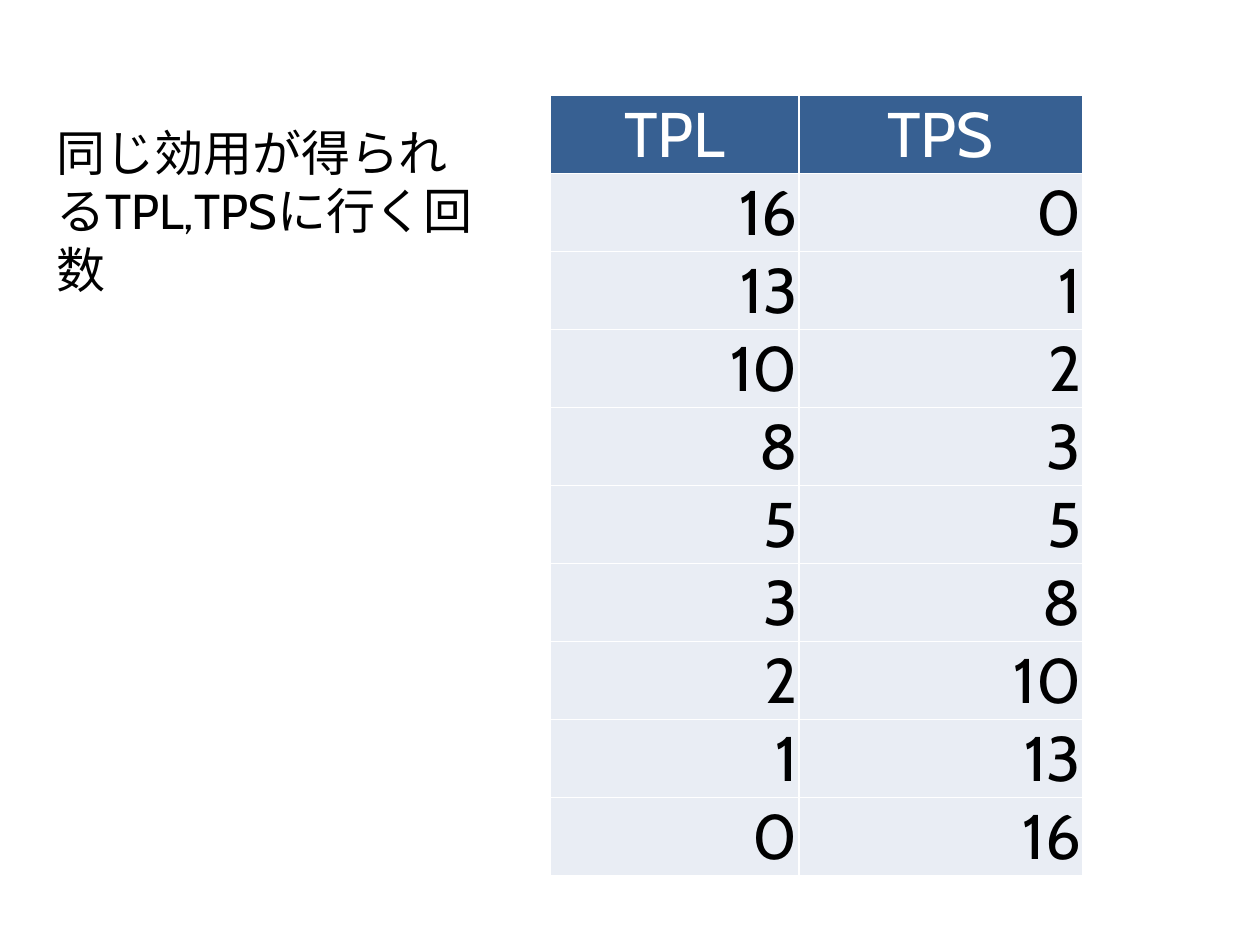
from lxml.etree import SubElement
from pptx import Presentation
from pptx.dml.color import RGBColor
from pptx.enum.text import MSO_ANCHOR as Anchor, PP_ALIGN as Align
from pptx.oxml.ns import qn
from pptx.util import Inches, Pt

CAPTION = "同じ効用が得られるTPL,TPSに行く回数"
PARKS = ("TPL", "TPS")
VISITS = [(16, 0), (13, 1), (10, 2), (8, 3), (5, 5), (3, 8), (2, 10), (1, 13), (0, 16)]
COLUMN_WIDTHS = (1.97, 2.25)
ROW_HEIGHT = 0.61
FONT = "Cabin"
WHITE, BLACK, NAVY, PALE = "FFFFFF", "000000", "376092", "E9EDF4"


def rgb(value):
    return RGBColor.from_string(value)


def write(paragraph, text, size, color, align=Align.LEFT):
    paragraph.alignment = align
    run = paragraph.add_run()
    run.text = text
    run.font.name = FONT
    run.font.size = Pt(size)
    run.font.color.rgb = rgb(color)


def add_borders(cell, color):
    properties = cell._tc.get_or_add_tcPr()
    for position, side in enumerate(("a:lnL", "a:lnR", "a:lnT", "a:lnB")):
        line = SubElement(properties, qn(side), w=str(Pt(1)))
        fill = SubElement(line, qn("a:solidFill"))
        SubElement(fill, qn("a:srgbClr"), val=color)
        properties.insert(position, line)


def fill_cell(cell, text, background, color, align):
    cell.margin_left = cell.margin_top = cell.margin_right = Inches(0.01)
    cell.margin_bottom = 0
    cell.vertical_anchor = Anchor.MIDDLE
    cell.fill.solid()
    cell.fill.fore_color.rgb = rgb(background)
    add_borders(cell, WHITE)
    write(cell.text_frame.paragraphs[0], text, 36, color, align)


def add_visits_table(slide):
    rows = [PARKS, *VISITS]
    frame = slide.shapes.add_table(
        len(rows), len(PARKS), Inches(4.37), Inches(0.76),
        Inches(sum(COLUMN_WIDTHS)), Inches(ROW_HEIGHT * len(rows)))
    table = frame.table
    for column, width in zip(table.columns, COLUMN_WIDTHS):
        column.width = Inches(width)
    for r, values in enumerate(rows):
        table.rows[r].height = Inches(ROW_HEIGHT)
        style = (PALE, BLACK, Align.RIGHT) if r else (NAVY, WHITE, Align.CENTER)
        for c, value in enumerate(values):
            fill_cell(table.cell(r, c), str(value), *style)


def add_caption(slide):
    caption = slide.shapes.add_textbox(Inches(0.35), Inches(0.92), Inches(3.54), Inches(1.51))
    caption.text_frame.word_wrap = True
    write(caption.text_frame.paragraphs[0], CAPTION, 28, BLACK)


def main():
    """Build the slide of visit counts that give equal utility."""
    deck = Presentation()
    deck.slide_width, deck.slide_height = Inches(10), Inches(7.5)
    slide = deck.slides.add_slide(deck.slide_layouts[6])
    add_visits_table(slide)
    add_caption(slide)
    deck.save("out.pptx")


if __name__ == "__main__":
    main()
